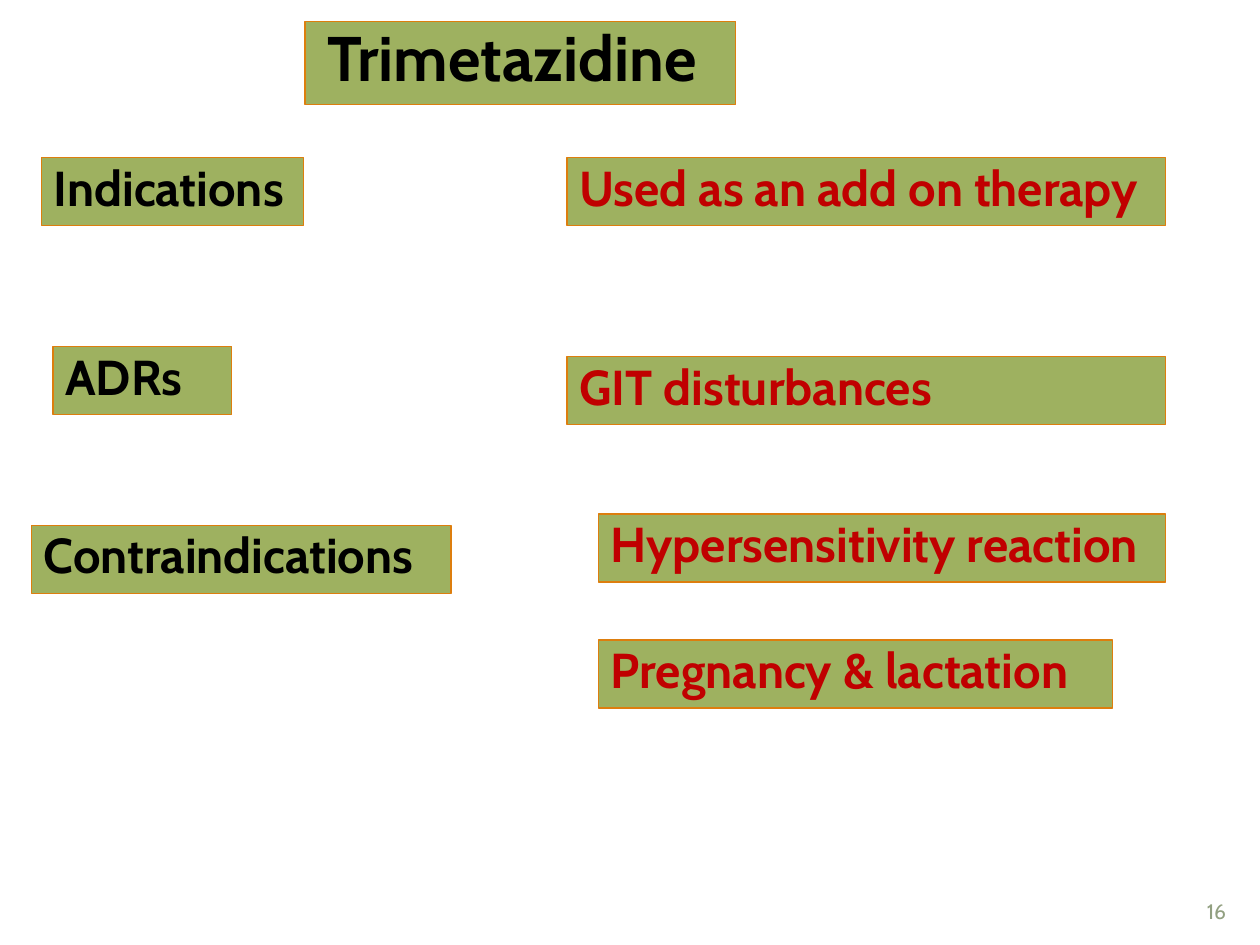
"""Build the Trimetazidine slide of indications, ADRs and contraindications."""
import dataclasses

import pptx
import pptx.dml.color
import pptx.enum.shapes
import pptx.enum.text
import pptx.util
from pptx.util import Inches


@dataclasses.dataclass(frozen=True)
class Theme:
    font: str = "Cabin"
    panel: str = "9EB160"
    border: str = "DD7E0E"
    heading: str = "000000"
    detail: str = "C00000"
    page: str = "92A081"
    title_size: int = 36
    label_size: int = 28
    page_size: int = 12
    border_width: float = 0.75


THEME = Theme()
LABEL_HEIGHT = 0.54

HEADINGS = [
    ("Indications", 0.33, 1.25, 2.08),
    ("ADRs", 0.42, 2.75, 1.42),
    ("Contraindications", 0.25, 4.17, 3.33),
]
DETAILS = [
    ("Used as an add on therapy", 4.5, 1.25, 4.75),
    ("GIT disturbances", 4.5, 2.83, 4.75),
    ("Hypersensitivity reaction", 4.75, 4.08, 4.5),
    ("Pregnancy & lactation", 4.75, 5.08, 4.08),
]


def rgb(value):
    return pptx.dml.color.RGBColor.from_string(value)


def write(frame, wording, size, color, bold, align):
    frame.word_wrap = True
    frame.vertical_anchor = pptx.enum.text.MSO_ANCHOR.TOP
    frame.text = wording
    paragraph = frame.paragraphs[0]
    paragraph.alignment = align
    font = paragraph.runs[0].font
    font.name = THEME.font
    font.size = pptx.util.Pt(size)
    font.bold = bold
    font.color.rgb = rgb(color)


def add_panel(slide, wording, left, top, width, color,
              height=LABEL_HEIGHT, size=THEME.label_size):
    panel = slide.shapes.add_shape(
        pptx.enum.shapes.MSO_SHAPE.RECTANGLE,
        Inches(left), Inches(top), Inches(width), Inches(height))
    panel.shadow.inherit = False
    panel.fill.solid()
    panel.fill.fore_color.rgb = rgb(THEME.panel)
    panel.line.color.rgb = rgb(THEME.border)
    panel.line.width = pptx.util.Pt(THEME.border_width)
    frame = panel.text_frame
    write(frame, wording, size, color, True, pptx.enum.text.PP_ALIGN.LEFT)
    frame.auto_size = pptx.enum.text.MSO_AUTO_SIZE.SHAPE_TO_FIT_TEXT
    frame.paragraphs[0].line_spacing = 0.9
    return panel


def add_title(slide):
    title = add_panel(slide, "Trimetazidine", 2.42, 0.17, 3.42, THEME.heading,
                      height=0.66, size=THEME.title_size)
    title.text_frame.margin_left = Inches(0.18)


def add_page_number(slide, number):
    page = slide.shapes.add_textbox(
        Inches(9), Inches(7.08), Inches(0.83), Inches(0.27))
    write(page.text_frame, number, THEME.page_size, THEME.page, False,
          pptx.enum.text.PP_ALIGN.RIGHT)


def main():
    deck = pptx.Presentation()
    deck.slide_width = Inches(10)
    deck.slide_height = Inches(7.5)
    slide = deck.slides.add_slide(deck.slide_layouts[6])
    for entries, color in ((HEADINGS, THEME.heading), (DETAILS, THEME.detail)):
        for wording, left, top, width in entries:
            add_panel(slide, wording, left, top, width, color)
    add_title(slide)
    add_page_number(slide, "16")
    deck.save("out.pptx")


if __name__ == "__main__":
    main()
